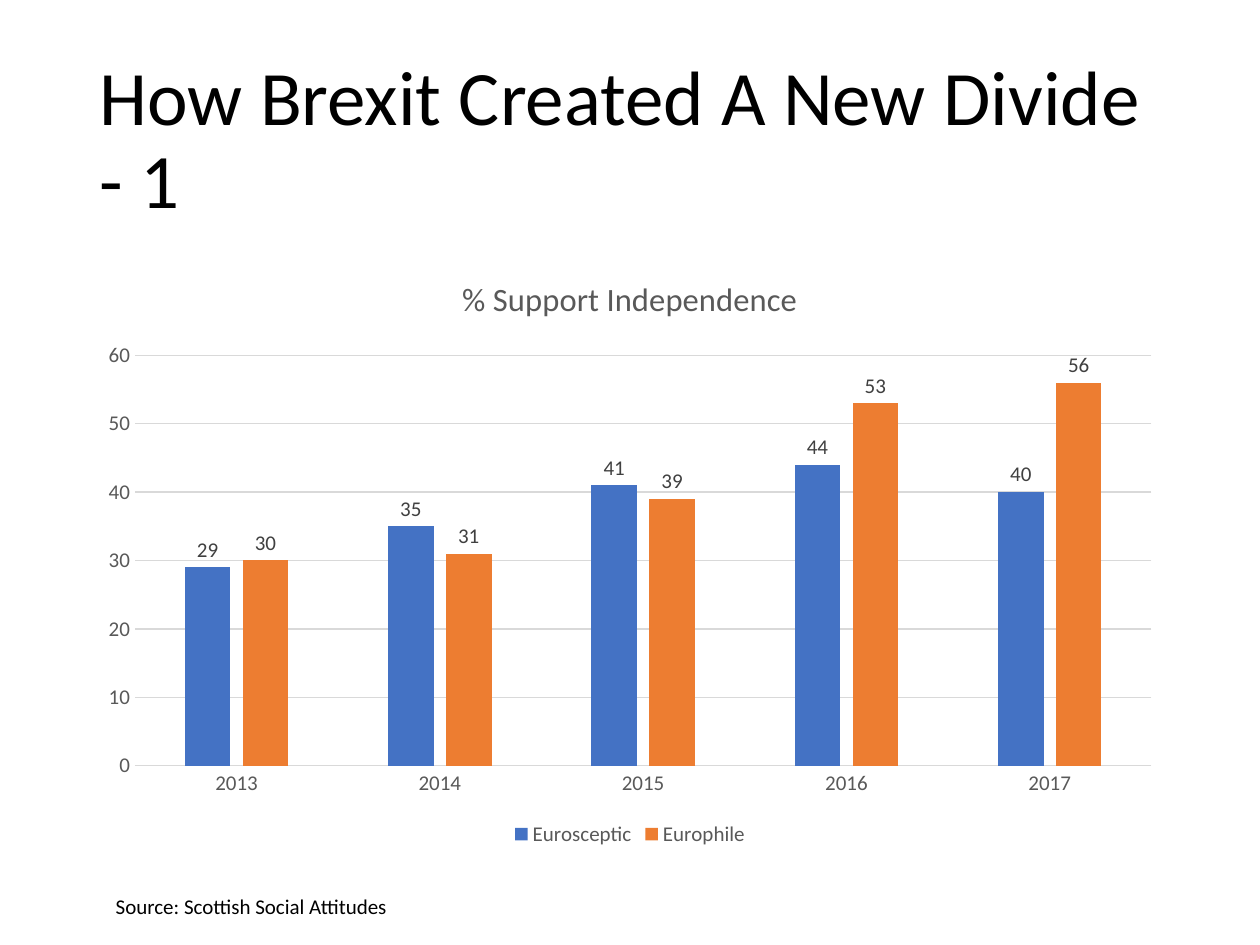
from pptx import Presentation
from pptx.chart.data import CategoryChartData
from pptx.dml.color import RGBColor
from pptx.enum.chart import XL_CHART_TYPE, XL_LABEL_POSITION, XL_LEGEND_POSITION, XL_TICK_MARK
from pptx.enum.text import MSO_ANCHOR
from pptx.util import Inches, Pt

# Content
TITLE = "How Brexit Created A New Divide - 1"
CHART_TITLE = "% Support Independence"
SOURCE = "Source: Scottish Social Attitudes"
YEARS = ["2013", "2014", "2015", "2016", "2017"]
SUPPORT = {
    "Eurosceptic": [29, 35, 41, 44, 40],
    "Europhile": [30, 31, 39, 53, 56],
}
COLOURS = {
    "Eurosceptic": "4472C4",
    "Europhile": "ED7D31",
    "text": "000000",
    "axis": "595959",
    "label": "404040",
    "grid": "D9D9D9",
}
FONT = "Calibri"
LEFT, WIDTH = 0.69, 8.62


def colour(name):
    return RGBColor.from_string(COLOURS[name])


def style(font, size, name):
    font.name = FONT
    font.size = Pt(size)
    font.bold = False
    font.color.rgb = colour(name)


def draw_line(line):
    line.color.rgb = colour("grid")
    line.width = Pt(0.75)


def add_text(slide, text, box, size, anchor=MSO_ANCHOR.TOP, spacing=1.0):
    frame = slide.shapes.add_textbox(*map(Inches, box)).text_frame
    frame.word_wrap = True
    frame.vertical_anchor = anchor
    paragraph = frame.paragraphs[0]
    paragraph.text = text
    paragraph.line_spacing = spacing
    style(paragraph.font, size, "text")


def add_support_chart(slide, box):
    data = CategoryChartData()
    data.categories = YEARS
    for group, values in SUPPORT.items():
        data.add_series(group, values)
    chart = slide.shapes.add_chart(
        XL_CHART_TYPE.COLUMN_CLUSTERED, *map(Inches, box), data).chart
    style(chart.font, 12, "axis")

    # Chart title and legend
    heading = chart.chart_title.text_frame.paragraphs[0]
    heading.text = CHART_TITLE
    style(heading.font, 18.6, "axis")
    chart.chart_title.include_in_layout = False
    chart.has_legend = True
    chart.legend.position = XL_LEGEND_POSITION.BOTTOM
    chart.legend.include_in_layout = False
    style(chart.legend.font, 12, "axis")

    # Axes
    for axis in (chart.category_axis, chart.value_axis):
        axis.major_tick_mark = axis.minor_tick_mark = XL_TICK_MARK.NONE
        style(axis.tick_labels.font, 12, "axis")
    draw_line(chart.category_axis.format.line)
    chart.value_axis.format.line.fill.background()
    chart.value_axis.minimum_scale = 0
    chart.value_axis.maximum_scale = 60
    chart.value_axis.major_unit = 10
    draw_line(chart.value_axis.major_gridlines.format.line)

    # Columns and their values
    plot = chart.plots[0]
    plot.vary_by_categories = False
    plot.gap_width = 219
    plot.overlap = -27
    for series in plot.series:
        series.format.fill.solid()
        series.format.fill.fore_color.rgb = colour(series.name)
        labels = series.data_labels
        labels.show_value = True
        labels.position = XL_LABEL_POSITION.OUTSIDE_END
        style(labels.font, 12, "label")


def main():
    deck = Presentation()
    deck.slide_width, deck.slide_height = Inches(10), Inches(7.5)
    slide = deck.slides.add_slide(deck.slide_layouts[6])
    add_text(slide, TITLE, (LEFT, 0.4, WIDTH, 1.45), 44, MSO_ANCHOR.MIDDLE, 0.9)
    add_support_chart(slide, (LEFT, 2, WIDTH, 4.76))
    add_text(slide, SOURCE, (0.82, 7.04, 7.06, 0.3), 12)
    deck.save("out.pptx")


if __name__ == "__main__":
    main()
